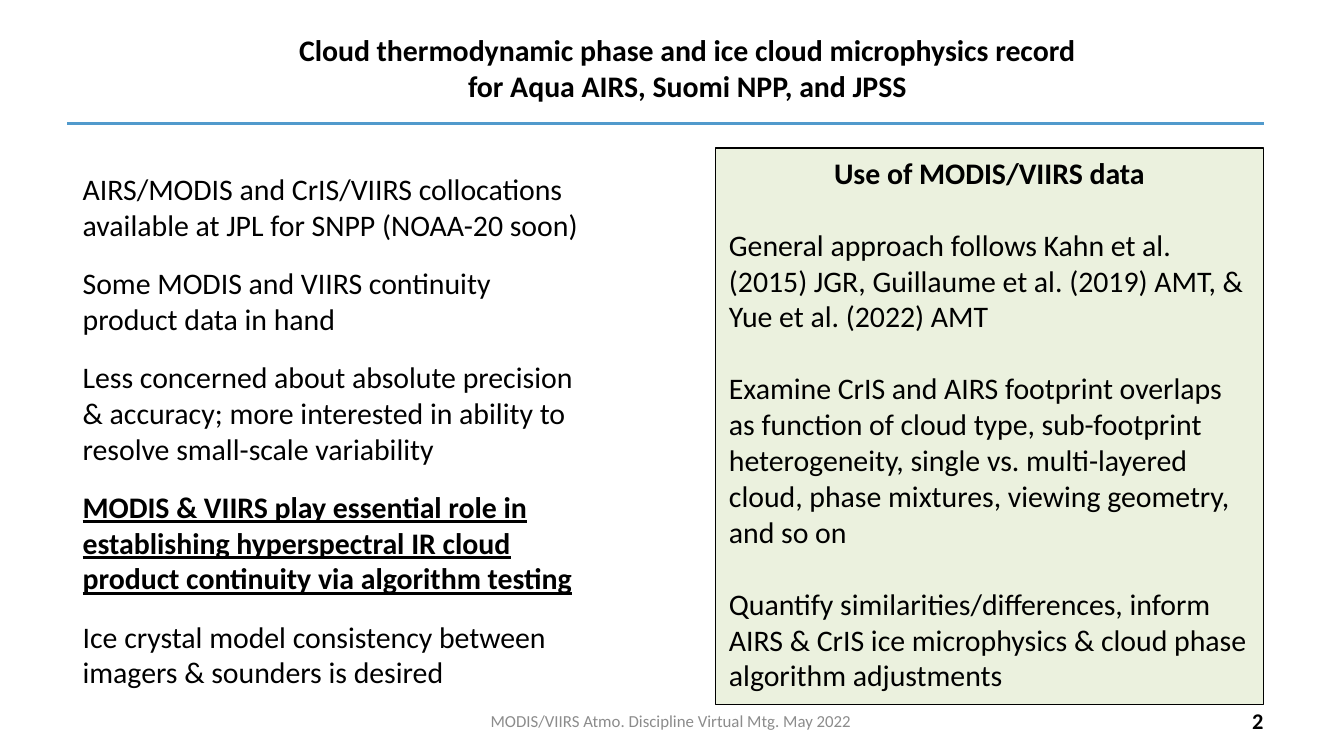
from lxml import etree
from pptx import Presentation
from pptx.dml.color import RGBColor
from pptx.enum.shapes import MSO_CONNECTOR, MSO_SHAPE
from pptx.enum.text import MSO_ANCHOR, PP_ALIGN
from pptx.oxml.ns import qn
from pptx.util import Inches, Pt

LEFT, CENTER, RIGHT = PP_ALIGN.LEFT, PP_ALIGN.CENTER, PP_ALIGN.RIGHT
TOP, MIDDLE = MSO_ANCHOR.TOP, MSO_ANCHOR.MIDDLE
RECTANGLE = MSO_SHAPE.RECTANGLE
STRAIGHT = MSO_CONNECTOR.STRAIGHT

FONT = "Calibri"
BLACK, GRAY, BLUE, PALE_GREEN = "000000", "8C8C8C", "519ACC", "EBF1DE"
WIDTH = Inches(10)
HEIGHT = WIDTH * 9 // 16
COLUMN, ROW = WIDTH / 100, HEIGHT / 100
DEFAULT_INSETS = (0.1, 0.05)
BODY_SIZE = 16
LINE_HEIGHT = 19.4

TITLE = [
    "Cloud thermodynamic phase and ice cloud microphysics record",
    "for Aqua AIRS, Suomi NPP, and JPSS",
]
STATUS_POINTS = [
    "AIRS/MODIS and CrIS/VIIRS collocations available at JPL for SNPP (NOAA-20 soon)",
    "Some MODIS and VIIRS continuity product data in hand",
    "Less concerned about absolute precision & accuracy; more interested in "
    "ability to resolve small-scale variability",
]
KEY_POINT = (
    "MODIS & VIIRS play essential role in establishing hyperspectral IR cloud "
    "product continuity via algorithm testing"
)
CLOSING_POINT = "Ice crystal model consistency between imagers & sounders is desired"
DATA_HEADING = "Use of MODIS/VIIRS data"
DATA_USES = [
    "General approach follows Kahn et al. (2015) JGR, Guillaume et al. (2019) AMT, "
    "& Yue et al. (2022) AMT",
    "Examine CrIS and AIRS footprint overlaps as function of cloud type, "
    "sub-footprint heterogeneity, single vs. multi-layered cloud, phase mixtures, "
    "viewing geometry, and so on",
    "Quantify similarities/differences, inform AIRS & CrIS ice microphysics & "
    "cloud phase algorithm adjustments",
]


def color(value):
    return RGBColor.from_string(value)


def place(column, row, columns, rows):
    return (round(column * COLUMN), round(row * ROW),
            round(columns * COLUMN), round(rows * ROW))


def prepare_frame(shape, anchor=TOP, insets=DEFAULT_INSETS):
    frame = shape.text_frame
    frame.word_wrap = True
    frame.vertical_anchor = anchor
    frame.margin_left = frame.margin_right = Inches(insets[0])
    frame.margin_top = frame.margin_bottom = Inches(insets[1])
    return frame


def add_text_box(page, area, anchor=TOP, insets=DEFAULT_INSETS):
    box = page.shapes.add_textbox(*place(*area))
    return prepare_frame(box, anchor, insets)


def add_panel(page, area):
    panel = page.shapes.add_shape(RECTANGLE, *place(*area))
    panel.shadow.inherit = False
    panel.fill.solid()
    panel.fill.fore_color.rgb = color(PALE_GREEN)
    panel.line.color.rgb = color(BLACK)
    panel.line.width = Pt(0.75)
    return prepare_frame(panel)


def add_rule(page, start, end, row):
    y = round(row * ROW)
    rule = page.shapes.add_connector(
        STRAIGHT, round(start * COLUMN), y, round(end * COLUMN), y)
    rule.line.color.rgb = color(BLUE)
    rule.line.width = Pt(2)
    etree.SubElement(rule._element.spPr, qn("a:effectLst"))


def add_paragraphs(frame, texts, align=LEFT, size=BODY_SIZE, ink=BLACK,
                   bold=False, underline=False, gap=0):
    for text in texts:
        first = frame.paragraphs[0]
        para = frame.add_paragraph() if first.runs else first
        para.alignment = align
        para.space_after = Pt(gap)
        span = para.add_run()
        span.text = text
        span.font.name = FONT
        span.font.size = Pt(size)
        span.font.bold = bold
        span.font.underline = underline
        span.font.color.rgb = color(ink)


def main():
    deck = Presentation()
    deck.slide_width, deck.slide_height = WIDTH, HEIGHT
    page = deck.slides.add_slide(deck.slide_layouts[6])

    title = add_text_box(page, (14.75, 3.56, 72.8, 10.84), MIDDLE, (0.07, 0.03))
    add_paragraphs(title, TITLE, CENTER, bold=True)
    add_rule(page, 5, 94.05, 16.33)

    status = add_text_box(page, (5.45, 21.85, 38.8, 72.18), insets=(0.07, 0.04))
    add_paragraphs(status, STATUS_POINTS, gap=12)
    add_paragraphs(status, [KEY_POINT], bold=True, underline=True, gap=12)
    add_paragraphs(status, [CLOSING_POINT])

    data = add_panel(page, (53.25, 19.56, 40.75, 73.6))
    add_paragraphs(data, [DATA_HEADING], CENTER, bold=True, gap=LINE_HEIGHT)
    add_paragraphs(data, DATA_USES[:-1], gap=LINE_HEIGHT)
    add_paragraphs(data, DATA_USES[-1:])

    footer = add_text_box(page, (34.05, 92.65, 31.7, 5.33), MIDDLE)
    add_paragraphs(footer, ["MODIS/VIIRS Atmo. Discipline Virtual Mtg. May 2022"],
                   CENTER, 9, GRAY)
    number = add_text_box(page, (71.7, 92.65, 23.3, 5.33), MIDDLE)
    add_paragraphs(number, ["2"], RIGHT, 12, bold=True)

    deck.save("out.pptx")


if __name__ == "__main__":
    main()
